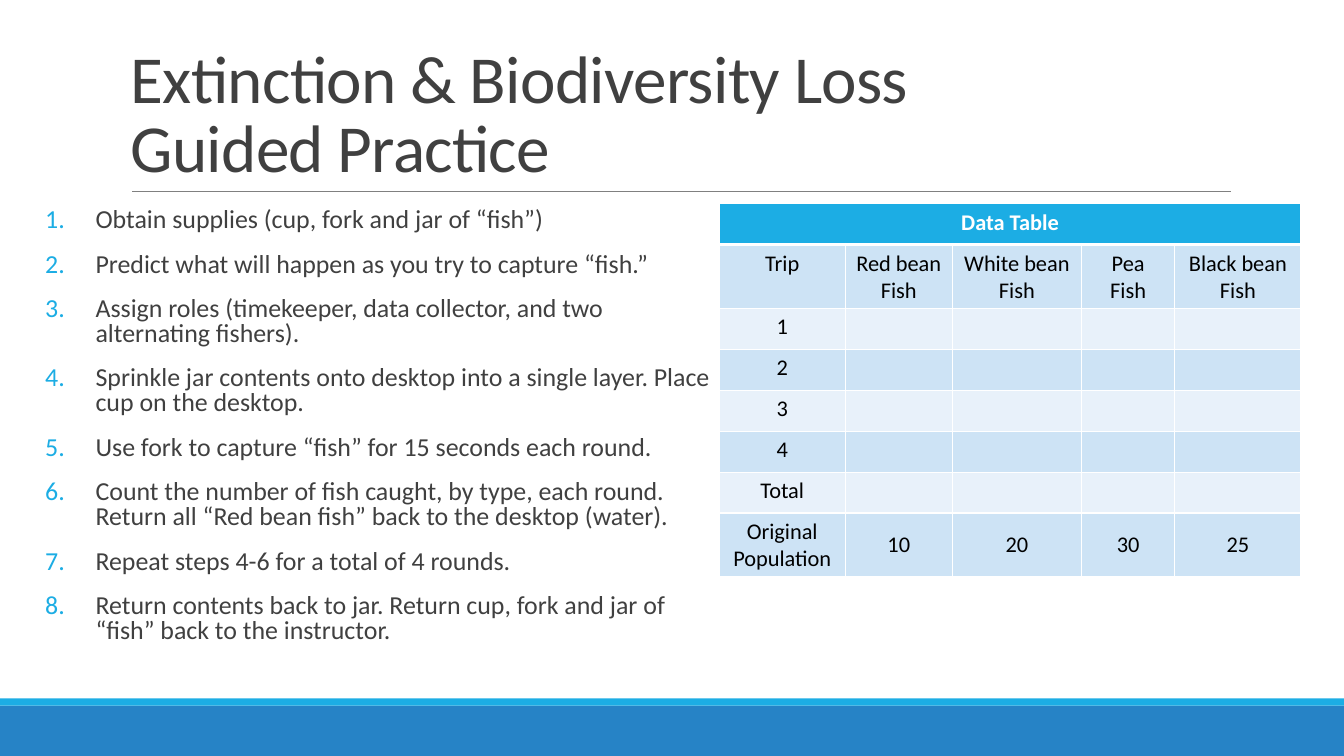
import pptx
import pptx.dml.color
import pptx.enum.shapes
import pptx.enum.text
import pptx.oxml
import pptx.oxml.ns
import pptx.util

EMU_PER_PX = 9525
FONT = "Calibri"
ANCHOR = pptx.enum.text.MSO_ANCHOR
CENTER = pptx.enum.text.PP_ALIGN.CENTER

STEPS = [
    "Obtain supplies (cup, fork and jar of “fish”)",
    "Predict what will happen as you try to capture “fish.”",
    "Assign roles (timekeeper, data collector, and two alternating fishers).",
    "Sprinkle jar contents onto desktop into a single layer. Place cup on the desktop.",
    "Use fork to capture “fish” for 15 seconds each round.",
    "Count the number of fish caught, by type, each round. "
    "Return all “Red bean fish” back to the desktop (water).",
    "Repeat steps 4-6 for a total of 4 rounds.",
    "Return contents back to jar. Return cup, fork and jar of “fish” back to the instructor.",
]
TRIP_ROWS = [
    ["Data Table"],
    ["Trip", "Red bean Fish", "White bean Fish", "Pea Fish", "Black bean Fish"],
    ["1"], ["2"], ["3"], ["4"], ["Total"],
    ["Original Population", "10", "20", "30", "25"],
]
TRIP_COLUMNS = [120, 102, 123, 89, 120]
TRIP_ROW_HEIGHT = 39


def px(*lengths):
    return [pptx.util.Emu(length * EMU_PER_PX) for length in lengths]


def color(value):
    return pptx.dml.color.RGBColor.from_string(value)


def apply(target, values):
    for name, value in values.items():
        setattr(target, name, value)


def add_xml(parent, tag, attributes="", inner=""):
    namespace = pptx.oxml.ns.nsdecls("a")
    parent.append(pptx.oxml.parse_xml(f"<a:{tag} {namespace} {attributes}>{inner}</a:{tag}>"))


def solid(value):
    return f'<a:solidFill><a:srgbClr val="{value}"/></a:solidFill>'


def style_runs(paragraph, size, value, bold=False):
    for run in paragraph.runs:
        apply(run.font, {"name": FONT, "size": pptx.util.Pt(size), "bold": bold})
        run.font.color.rgb = color(value)


def add_band(slide, top, height, value):
    band = slide.shapes.add_shape(
        pptx.enum.shapes.MSO_SHAPE.RECTANGLE, *px(0, top, 1280, height))
    band.shadow.inherit = False
    band.fill.solid()
    band.fill.fore_color.rgb = color(value)
    band.line.fill.background()


def add_rule(slide, left, right, y):
    rule = slide.shapes.add_connector(
        pptx.enum.shapes.MSO_CONNECTOR.STRAIGHT, *px(left, y, right, y))
    rule.line.color.rgb = color("808080")
    rule.line.width = pptx.util.Pt(0.5)
    add_xml(rule._element.spPr, "effectLst")


def add_text_frame(slide, box, values):
    frame = slide.shapes.add_textbox(*px(*box)).text_frame
    apply(frame, {"word_wrap": True, **values})
    return frame


def add_title(slide, text):
    frame = add_text_frame(slide, (115, 30, 1056, 152), {"vertical_anchor": ANCHOR.BOTTOM})
    heading = frame.paragraphs[0]
    heading.text = text
    heading.line_spacing = 0.85
    style_runs(heading, 48, "404040")
    for run in heading.runs:
        run.font._element.set("spc", "-50")


def add_steps(slide, steps):
    frame = add_text_frame(slide, (43, 194, 643, 437), {"margin_left": 0, "margin_right": 0})
    for index, text in enumerate(steps):
        step = frame.add_paragraph() if index else frame.paragraphs[0]
        step.text = text
        apply(step, {
            "line_spacing": 0.8,
            "space_before": pptx.util.Pt(12),
            "space_after": pptx.util.Pt(2),
        })
        style_runs(step, 18.5, "404040")
        indent = px(48)[0]
        properties = step._p.get_or_add_pPr()
        properties.set("marL", str(indent))
        properties.set("indent", str(-indent))
        add_xml(properties, "buClr", inner='<a:srgbClr val="1CADE4"/>')
        add_xml(properties, "buFont", 'typeface="+mj-lt"')
        add_xml(properties, "buAutoNum", 'type="arabicPeriod"')


def add_borders(cell, row):
    widths = {"lnL": 1, "lnR": 1, "lnT": 3 if row == 1 else 1, "lnB": 3 if row == 0 else 1}
    for side, points in widths.items():
        width = pptx.util.Pt(points)
        add_xml(cell._tc.get_or_add_tcPr(), side, f'w="{width}"', solid("FFFFFF"))


def add_trip_table(slide, rows, columns):
    size = (sum(columns), TRIP_ROW_HEIGHT * len(rows))
    table = slide.shapes.add_table(len(rows), len(columns), *px(685, 194, *size)).table
    for column, width in zip(table.columns, px(*columns)):
        column.width = width
    table.cell(0, 0).merge(table.cell(0, len(columns) - 1))
    for r, texts in enumerate(rows):
        header = r == 0
        fill = "1CADE4" if header else ("CDE3F5" if r % 2 else "E8F1FA")
        for c in range(len(columns)):
            cell = table.cell(r, c)
            add_borders(cell, r)
            cell.fill.solid()
            cell.fill.fore_color.rgb = color(fill)
            if c < len(texts):
                entry = cell.text_frame.paragraphs[0]
                entry.text = texts[c]
                entry.alignment = CENTER
                style_runs(entry, 16, "FFFFFF" if header else "000000", header)
            if r == len(rows) - 1 and c:
                cell.vertical_anchor = ANCHOR.MIDDLE


def main():
    deck = pptx.Presentation()
    deck.slide_width, deck.slide_height = px(1280, 720)
    slide = deck.slides.add_slide(deck.slide_layouts[6])
    add_band(slide, 672, 48, "2683C6")
    add_band(slide, 665, 7, "1CADE4")
    add_rule(slide, 126, 1172, 182)
    add_title(slide, "Extinction & Biodiversity Loss\vGuided Practice")
    add_steps(slide, STEPS)
    add_trip_table(slide, TRIP_ROWS, TRIP_COLUMNS)
    deck.save("out.pptx")


if __name__ == "__main__":
    main()
